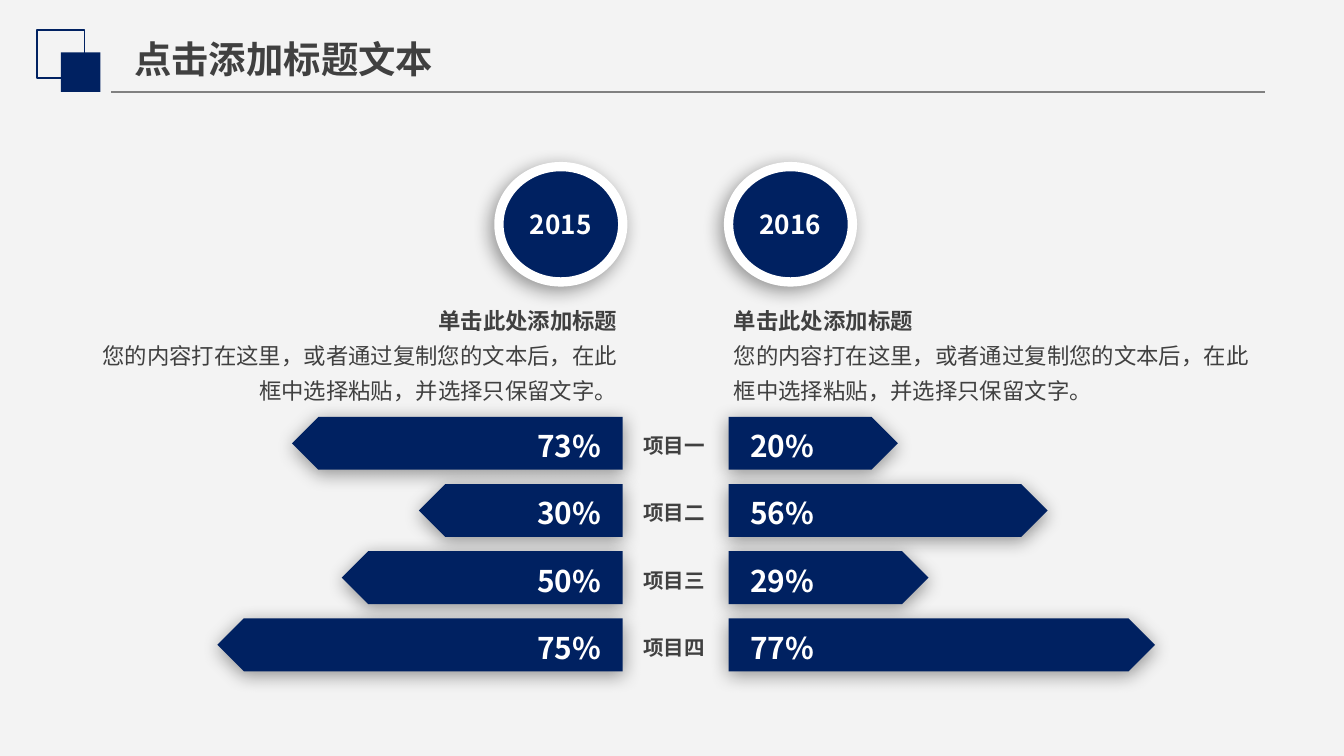
from dataclasses import dataclass

from lxml.etree import SubElement
from pptx import Presentation
from pptx.dml.color import RGBColor
from pptx.enum.shapes import MSO_CONNECTOR, MSO_SHAPE
from pptx.enum.text import MSO_ANCHOR, MSO_AUTO_SIZE, PP_ALIGN
from pptx.oxml.ns import qn
from pptx.util import Cm, Pt

FONT = "Noto Sans CJK SC"
COLORS = {"back": "F3F3F3", "navy": "002161", "white": "FFFFFF",
          "text": "404040", "rule": "808080", "shadow": "000000"}
HEADING = "单击此处添加标题"
BODY = "您的内容打在这里，或者通过复制您的文本后，在此框中选择粘贴，并选择只保留文字。"
ITEMS = ["项目一", "项目二", "项目三", "项目四"]
YEARS = {
    "2015": [("73%", 6.25), ("30%", 3.85), ("50%", 5.31), ("75%", 7.66)],
    "2016": [("20%", 3.2), ("56%", 6.03), ("29%", 3.78), ("77%", 8.06)],
}
BARS_TOP = 4.73
ROW_PITCH = 1.27
BAR_HEIGHT = 1


@dataclass
class Box:
    """A rectangle measured in centimetres."""
    left: float
    top: float
    width: float
    height: float

    def lengths(self):
        """Return the four sides as slide lengths."""
        return [Cm(side) for side in (self.left, self.top, self.width, self.height)]


def color(name):
    """Look up a palette colour."""
    return RGBColor.from_string(COLORS[name])


def add_span(para, text, size, ink, bold=True):
    """Add one formatted run to a paragraph."""
    span = para.add_run()
    span.text = text
    span.font.name = FONT
    span.font.size = Pt(size)
    span.font.bold = bold
    span.font.color.rgb = color(ink)
    latin = span.font._element.find(qn("a:latin"))
    latin.addnext(latin.makeelement(qn("a:ea"), {"typeface": FONT}))


def set_insets(frame, side, end):
    """Set the inner margins of a text frame."""
    frame.margin_left = frame.margin_right = Cm(side)
    frame.margin_top = frame.margin_bottom = Cm(end)


def add_shape(page, kind, box, fill=None, line=None, weight=1):
    """Add a preset shape without a shadow."""
    shape = page.shapes.add_shape(kind, *box.lengths())
    shape.shadow.inherit = False
    if fill:
        shape.fill.solid()
        shape.fill.fore_color.rgb = color(fill)
    else:
        shape.fill.background()
    if line:
        shape.line.color.rgb = color(line)
        shape.line.width = Pt(weight)
    else:
        shape.line.fill.background()
    return shape


def add_shadow(shape, distance, angle):
    """Give a shape a soft outer shadow."""
    effects = shape._element.spPr.find(qn("a:effectLst"))
    outer = SubElement(effects, qn("a:outerShdw"), blurRad=str(Pt(10)),
                       dist=str(Pt(distance)), dir=str(angle * 60000),
                       algn="ctr", rotWithShape="0")
    tint = SubElement(outer, qn("a:srgbClr"), val=COLORS["shadow"])
    SubElement(tint, qn("a:alpha"), val="40000")


def add_label(page, box, text, size, ink):
    """Add a centred one-line label."""
    frame = page.shapes.add_textbox(*box.lengths()).text_frame
    frame.word_wrap = False
    frame.auto_size = MSO_AUTO_SIZE.SHAPE_TO_FIT_TEXT
    set_insets(frame, 0.18, 0.1)
    para = frame.paragraphs[0]
    para.alignment = PP_ALIGN.CENTER
    add_span(para, text, size, ink)


def add_header(page, box):
    """Place the square emblem, the title and the rule below it."""
    add_shape(page, MSO_SHAPE.RECTANGLE, Box(box.left, box.top, 0.9, 0.9), line="navy")
    add_shape(page, MSO_SHAPE.RECTANGLE,
              Box(box.left + 0.45, box.top + 0.42, 0.75, 0.75), fill="navy")

    bottom = Cm(box.top + box.height)
    rule = page.shapes.add_connector(MSO_CONNECTOR.STRAIGHT, Cm(box.left + 1.4), bottom,
                                     Cm(box.left + box.width), bottom)
    rule.line.color.rgb = color("rule")
    rule.line.width = Pt(0.75)
    SubElement(rule._element.spPr, qn("a:effectLst"))

    title = page.shapes.title
    title.left, title.top, title.width, title.height = Box(
        box.left + 1.58, box.top - 0.01, 6.22, 1.12).lengths()
    frame = title.text_frame
    frame.word_wrap = False
    frame.auto_size = MSO_AUTO_SIZE.SHAPE_TO_FIT_TEXT
    frame.vertical_anchor = MSO_ANCHOR.TOP
    para = frame.paragraphs[0]
    para.alignment = PP_ALIGN.LEFT
    add_span(para, "点击添加标题文本", 20, "text")


def add_year(page, box, year, bars, mirrored):
    """Place a year badge, its text and its bars, growing away from the middle."""
    def inner(offset, top, width, height):
        """Place a part at a distance from the column's inner edge."""
        left = box.left + (box.width - offset - width if mirrored else offset)
        return Box(left, box.top + top, width, height)

    badge = add_shape(page, MSO_SHAPE.OVAL, inner(0, 0, 2.34, 2.18), "navy", "white", 5)
    add_shadow(badge, 3, 135)
    set_insets(badge.text_frame, 0.18, 0.1)
    badge.text_frame.vertical_anchor = MSO_ANCHOR.MIDDLE
    badge.text_frame.paragraphs[0].alignment = PP_ALIGN.CENTER
    add_span(badge.text_frame.paragraphs[0], year, 14, "white")

    note = inner(0, 2.46, box.width, 2.11)
    frame = page.shapes.add_textbox(*note.lengths()).text_frame
    frame.word_wrap = True
    frame.auto_size = MSO_AUTO_SIZE.SHAPE_TO_FIT_TEXT
    set_insets(frame, 0.1, 0.05)
    for para, text, bold in ((frame.paragraphs[0], HEADING, True),
                             (frame.add_paragraph(), BODY, False)):
        para.alignment = PP_ALIGN.RIGHT if mirrored else PP_ALIGN.LEFT
        para.line_spacing = 1.3
        add_span(para, text, 12, "text", bold)

    for row, (value, width) in enumerate(bars):
        top = BARS_TOP + row * ROW_PITCH
        bar = add_shape(page, MSO_SHAPE.PENTAGON, inner(0, top, width, BAR_HEIGHT), "navy")
        add_shadow(bar, 2, 90)
        if mirrored:
            bar._element.spPr.xfrm.set("flipH", "1")
        add_label(page, inner(0.2, top + 0.11, 1.63, 0.89), value, 16, "white")


def add_items(page, box):
    """Place the item names between the two columns of bars."""
    for row, item in enumerate(ITEMS):
        add_label(page, Box(box.left, box.top + row * ROW_PITCH, box.width, box.height),
                  item, 11, "text")


def main():
    """Build and save the deck."""
    deck = Presentation()
    deck.slide_width, deck.slide_height = Cm(25.4), Cm(14.29)
    page = deck.slides.add_slide(deck.slide_layouts[5])
    page.background.fill.solid()
    page.background.fill.fore_color.rgb = color("back")

    add_header(page, Box(0.7, 0.57, 23.2, 1.17))
    columns = [Box(1.7, 3.15, 10.07, 9.54), Box(13.77, 3.15, 10.31, 9.54)]
    for index, (box, (year, bars)) in enumerate(zip(columns, YEARS.items())):
        add_year(page, box, year, bars, mirrored=index == 0)
    add_items(page, Box(11.96, 8.09, 1.57, 0.69))
    deck.save("out.pptx")


if __name__ == "__main__":
    main()
